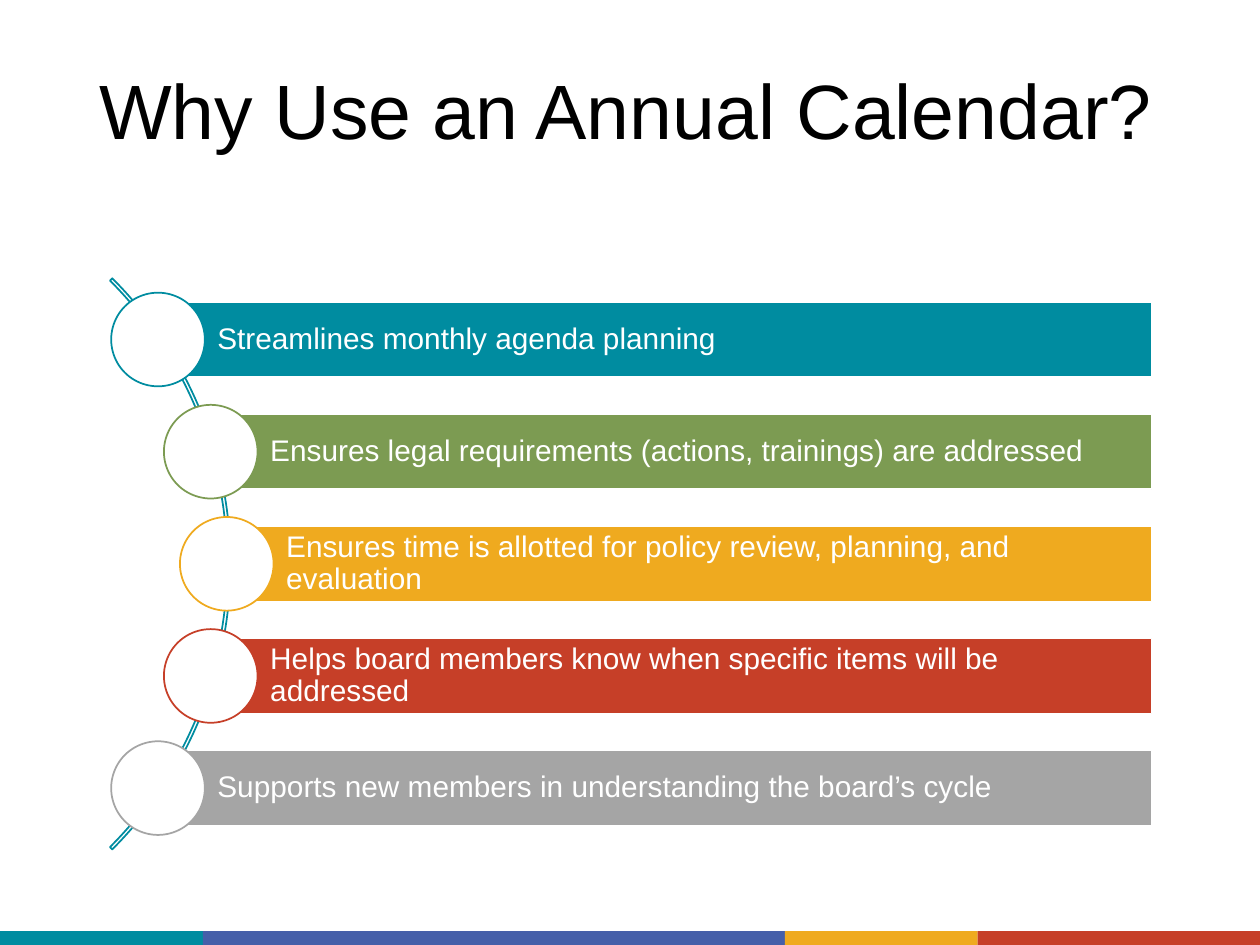
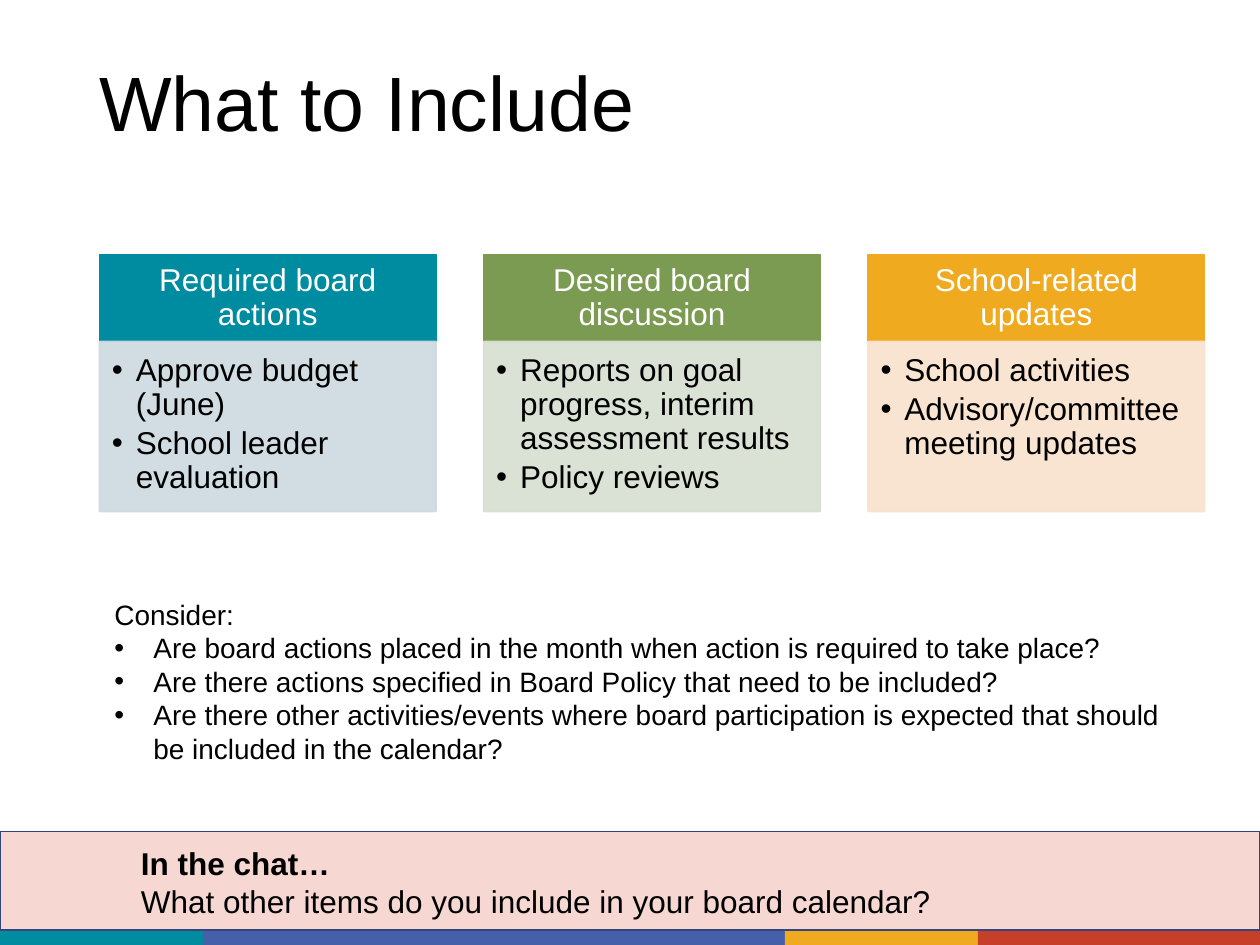
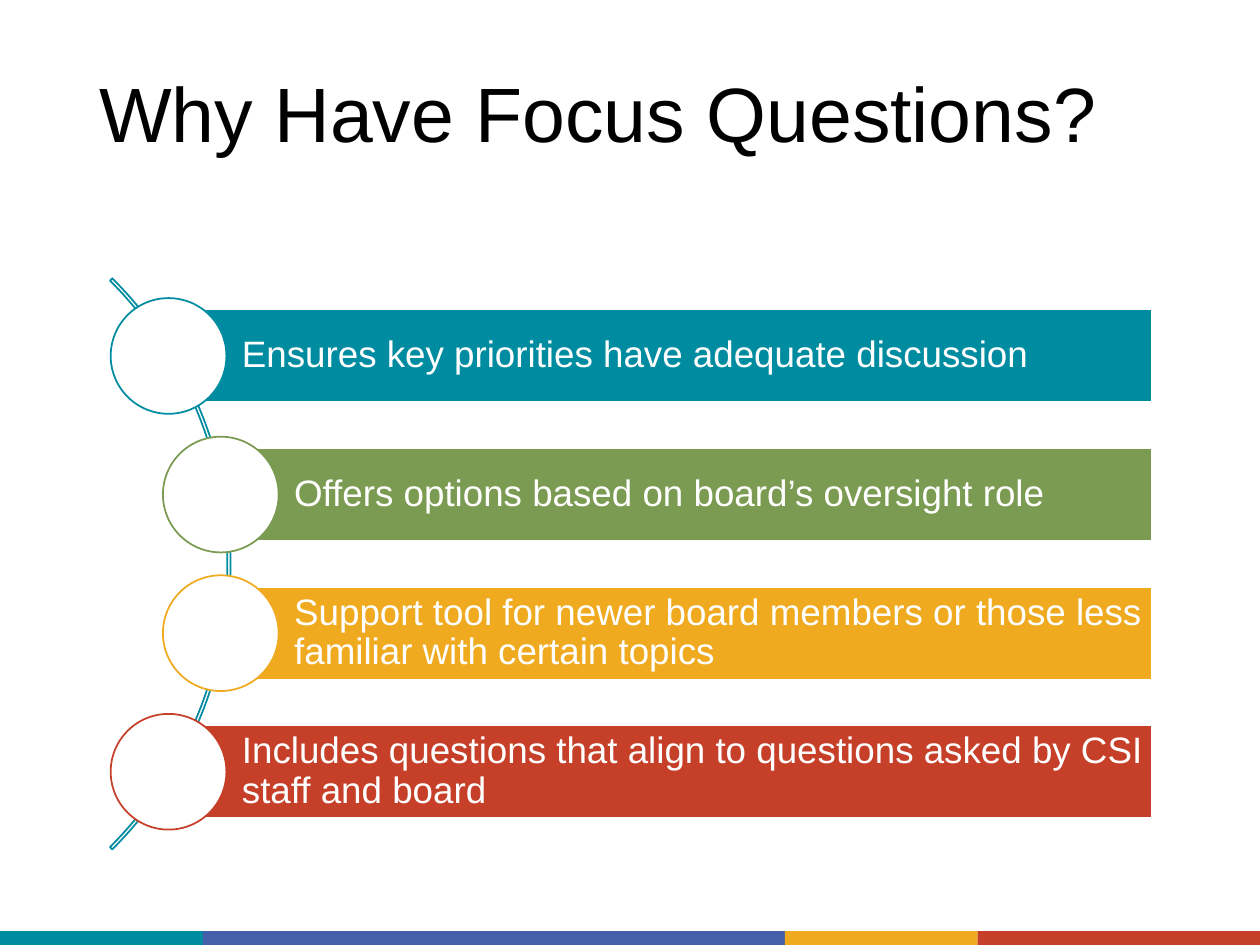
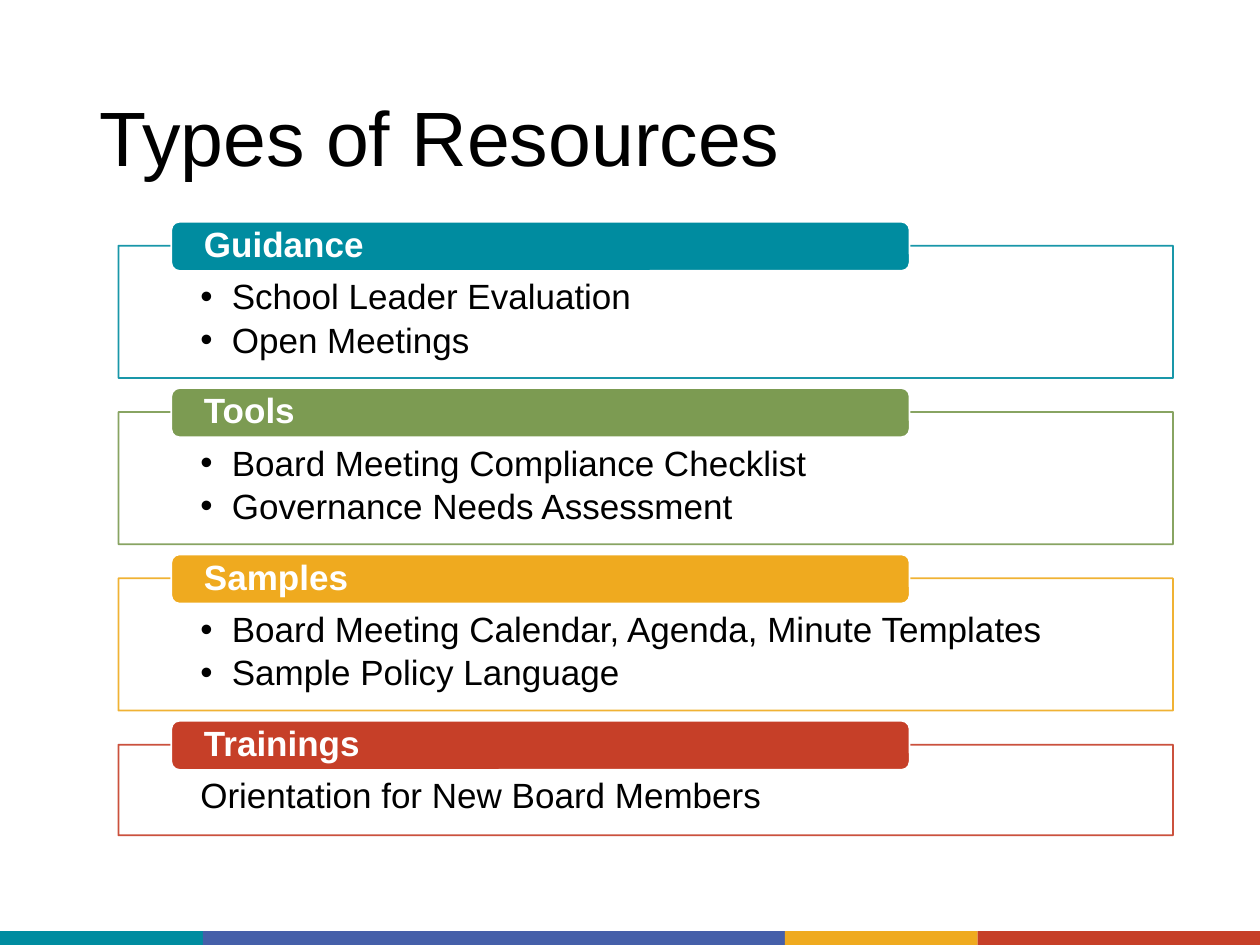
"""Build four slides on board calendars, focus questions and resources."""
from math import sqrt

from lxml import etree
from pptx import Presentation
from pptx.dml.color import RGBColor
from pptx.enum.shapes import MSO_SHAPE
from pptx.enum.text import MSO_ANCHOR, PP_ALIGN
from pptx.oxml.ns import qn
from pptx.util import Inches, Pt

RECT, OVAL, ROUNDED, ARC = (MSO_SHAPE.RECTANGLE, MSO_SHAPE.OVAL,
                            MSO_SHAPE.ROUNDED_RECTANGLE, MSO_SHAPE.BLOCK_ARC)
TOP, MIDDLE = MSO_ANCHOR.TOP, MSO_ANCHOR.MIDDLE
LEFT, CENTER = PP_ALIGN.LEFT, PP_ALIGN.CENTER

FONT = "Arial"
COLORS = {
    "teal": "008CA0", "green": "7C9B52", "amber": "EFAA1F", "red": "C63F28",
    "gray": "A5A5A5", "blue": "455FA9", "navy": "33467D", "pink": "F6D7D2",
    "pale_teal": "CCDADF", "pale_green": "D7DED1", "pale_amber": "F9E2CD",
    "white": "FFFFFF", "black": "000000",
}
SEQUENCE = ["teal", "green", "amber", "red", "gray"]
FOOTER_BANDS = [("teal", 1.61), ("blue", 4.62), ("amber", 1.53), ("red", 2.24)]
DEFAULT_INSETS = (0.1, 0.05, 0.1, 0.05)

ARC_LEFT, ARC_TOP, ARC_SIZE = -4.58, 1.27, 6.41
ORBIT = 3.175
BAR_RIGHT = 9.14

CALENDAR_REASONS = [
    "Streamlines monthly agenda planning",
    "Ensures legal requirements (actions, trainings) are addressed",
    "Ensures time is allotted for policy review, planning, and evaluation",
    "Helps board members know when specific items will be addressed",
    "Supports new members in understanding the board’s cycle",
]
FOCUS_REASONS = [
    "Ensures key priorities have adequate discussion",
    "Offers options based on board’s oversight role",
    "Support tool for newer board members or those less familiar with certain topics",
    "Includes questions that align to questions asked by CSI staff and board",
]
CALENDAR_ITEMS = [
    ("Required board actions",
     ["Approve budget (June)", "School leader evaluation"]),
    ("Desired board discussion",
     ["Reports on goal progress, interim assessment results", "Policy reviews"]),
    ("School-related updates",
     ["School activities", "Advisory/committee meeting updates"]),
]
CONSIDERATIONS = [
    "Are board actions placed in the month when action is required to take place?",
    "Are there actions specified in Board Policy that need to be included?",
    "Are there other activities/events where board participation is expected "
    "that should be included in the calendar?",
]
RESOURCES = [
    ("Guidance", ["School Leader Evaluation", "Open Meetings"]),
    ("Tools", ["Board Meeting Compliance Checklist", "Governance Needs Assessment"]),
    ("Samples", ["Board Meeting Calendar, Agenda, Minute Templates",
                 "Sample Policy Language"]),
    ("Trainings", ["Orientation for New Board Members"]),
]


def apply_format(target, values):
    """Set each named attribute of the target."""
    for name, value in values.items():
        setattr(target, name, value)


def rgb(color):
    """Return the named colour."""
    return RGBColor.from_string(COLORS[color])


def set_opacity(shape, percent):
    """Make the fill and line of a shape partly transparent."""
    for color in shape._element.spPr.iter(qn("a:srgbClr")):
        etree.SubElement(color, qn("a:alpha"), val=str(percent * 1000))


def add_block(slide, kind, box, fill=None, line=None, opacity=None):
    """Add a preset shape with a plain fill and a one-point line."""
    shape = slide.shapes.add_shape(kind, *map(Inches, box))
    shape.shadow.inherit = False
    if fill:
        shape.fill.solid()
        shape.fill.fore_color.rgb = rgb(fill)
    else:
        shape.fill.background()
    if line:
        shape.line.color.rgb = rgb(line)
        shape.line.width = Pt(1)
    else:
        shape.line.fill.background()
    if opacity:
        set_opacity(shape, opacity)
    return shape


def add_bullet(paragraph, indent):
    """Give a paragraph a hanging round bullet."""
    properties = paragraph._p.get_or_add_pPr()
    properties.set("marL", str(Inches(indent)))
    properties.set("indent", str(-Inches(indent)))
    etree.SubElement(properties, qn("a:buFont"), typeface=FONT)
    etree.SubElement(properties, qn("a:buChar"), char="•")


def write(shape, lines, size, color="black", bold_lines=(), bullet_from=None,
          indent=0, insets=DEFAULT_INSETS, anchor=TOP, align=LEFT,
          spacing=0.9, gap=0):
    """Write one paragraph per line, with bullets from the given line on."""
    frame = shape.text_frame
    sides = ("margin_left", "margin_top", "margin_right", "margin_bottom")
    apply_format(frame, {"word_wrap": True, "vertical_anchor": anchor,
                         **dict(zip(sides, map(Inches, insets)))})
    for number, line in enumerate(lines):
        paragraph = frame.add_paragraph() if number else frame.paragraphs[0]
        if bullet_from is not None and number >= bullet_from:
            add_bullet(paragraph, indent)
        apply_format(paragraph, {"alignment": align, "line_spacing": spacing,
                                 "space_after": Pt(gap)})
        run = paragraph.add_run()
        run.text = line
        apply_format(run.font, {"name": FONT, "size": Pt(size),
                                "bold": number in bold_lines})
        run.font.color.rgb = rgb(color)


def add_text(slide, box, lines, size, **options):
    """Add a text box."""
    write(slide.shapes.add_textbox(*map(Inches, box)), lines, size, **options)


def add_base_slide(deck, title, title_height):
    """Add a blank slide with the footer bands and a title."""
    slide = deck.slides.add_slide(deck.slide_layouts[6])
    left = 0
    for color, width in FOOTER_BANDS:
        add_block(slide, RECT, (left, 7.39, width, 0.11), color)
        left += width
    add_text(slide, (0.69, 0.4, 8.62, title_height), [title], 44, anchor=MIDDLE)
    return slide


def add_curved_list(slide, reasons, pitch, size):
    """Add bars whose round markers sit along an arc."""
    arc = add_block(slide, ARC, (ARC_LEFT, ARC_TOP, ARC_SIZE, ARC_SIZE), line="teal")
    for index, angle in enumerate((189, 27, 0.004)):
        arc.adjustments[index] = angle
    center_x, center_y = ARC_LEFT + ARC_SIZE / 2, ARC_TOP + ARC_SIZE / 2
    bar_height, marker = 0.67 * pitch, 0.835 * pitch
    edge = 0.05 * pitch
    for index, (reason, color) in enumerate(zip(reasons, SEQUENCE)):
        offset = (index - (len(reasons) - 1) / 2) * pitch
        x, y = center_x + sqrt(ORBIT ** 2 - offset ** 2), center_y + offset
        bar = add_block(slide, RECT, (x, y - bar_height / 2, BAR_RIGHT - x, bar_height),
                        color, "white")
        write(bar, [reason], size, color="white", anchor=MIDDLE,
              insets=(0.53 * pitch, edge, edge, edge))
        add_block(slide, OVAL, (x - marker / 2, y - marker / 2, marker, marker),
                  "white", color)


def add_item_column(slide, left, color, heading, items):
    """Add a coloured heading above a pale panel of bullets."""
    header = add_block(slide, RECT, (left, 2.02, 2.67, 0.69), color, color)
    write(header, [heading], 18, color="white", anchor=MIDDLE, align=CENTER,
          insets=(0.14, 0.08, 0.14, 0.08))
    pale = "pale_" + color
    panel = add_block(slide, RECT, (left, 2.71, 2.67, 1.35), pale, pale, opacity=90)
    write(panel, items, 18, bullet_from=0, indent=0.19, gap=3,
          insets=(0.1, 0.1, 0.14, 0.16))


def add_resource(slide, top, color, heading, items):
    """Add an outlined panel with a heading tab on its top edge."""
    height = 0.39 + 0.33 * len(items)
    panel = add_block(slide, RECT, (0.94, top, 8.37, height), "white", color, opacity=90)
    write(panel, items, 20, bullet_from=0 if len(items) > 1 else None, indent=0.25,
          gap=3, insets=(0.65, 0.27, 0.65, 0.16))
    tab = add_block(slide, ROUNDED, (1.36, top - 0.19, 5.86, 0.39), color, "white")
    write(tab, [heading], 20, color="white", bold_lines=(0,), anchor=MIDDLE,
          insets=(0.24, 0, 0.24, 0))


def build_what_to_include(deck):
    """Build the slide of calendar items, considerations and chat prompt."""
    slide = add_base_slide(deck, "What to Include", 0.89)
    for index, (heading, items) in enumerate(CALENDAR_ITEMS):
        add_item_column(slide, 0.79 + 3.05 * index, SEQUENCE[index], heading, items)
    add_text(slide, (0.81, 4.69, 8.74, 1.45), ["Consider:", *CONSIDERATIONS], 16,
             bullet_from=1, indent=0.31, spacing=1.0)
    add_block(slide, RECT, (0, 6.6, 10, 0.78), "pink", "navy")
    add_text(slide, (1.02, 6.65, 8.98, 0.71),
             ["In the chat…", "What other items do you include in your board calendar?"],
             18, bold_lines=(0,), spacing=1.0)


def build_resources(deck):
    """Build the slide of resource types."""
    slide = add_base_slide(deck, "Types of Resources", 1.45)
    for index, (heading, items) in enumerate(RESOURCES):
        add_resource(slide, 1.95 + 1.32 * index, SEQUENCE[index], heading, items)


def main():
    """Build and save the deck."""
    deck = Presentation()
    apply_format(deck, {"slide_width": Inches(10), "slide_height": Inches(7.5)})
    calendar = add_base_slide(deck, "Why Use an Annual Calendar?", 1.02)
    add_curved_list(calendar, CALENDAR_REASONS, 0.89, 17)
    build_what_to_include(deck)
    focus = add_base_slide(deck, "Why Have Focus Questions?", 1.07)
    add_curved_list(focus, FOCUS_REASONS, 1.1, 21)
    build_resources(deck)
    deck.save("out.pptx")


if __name__ == "__main__":
    main()
